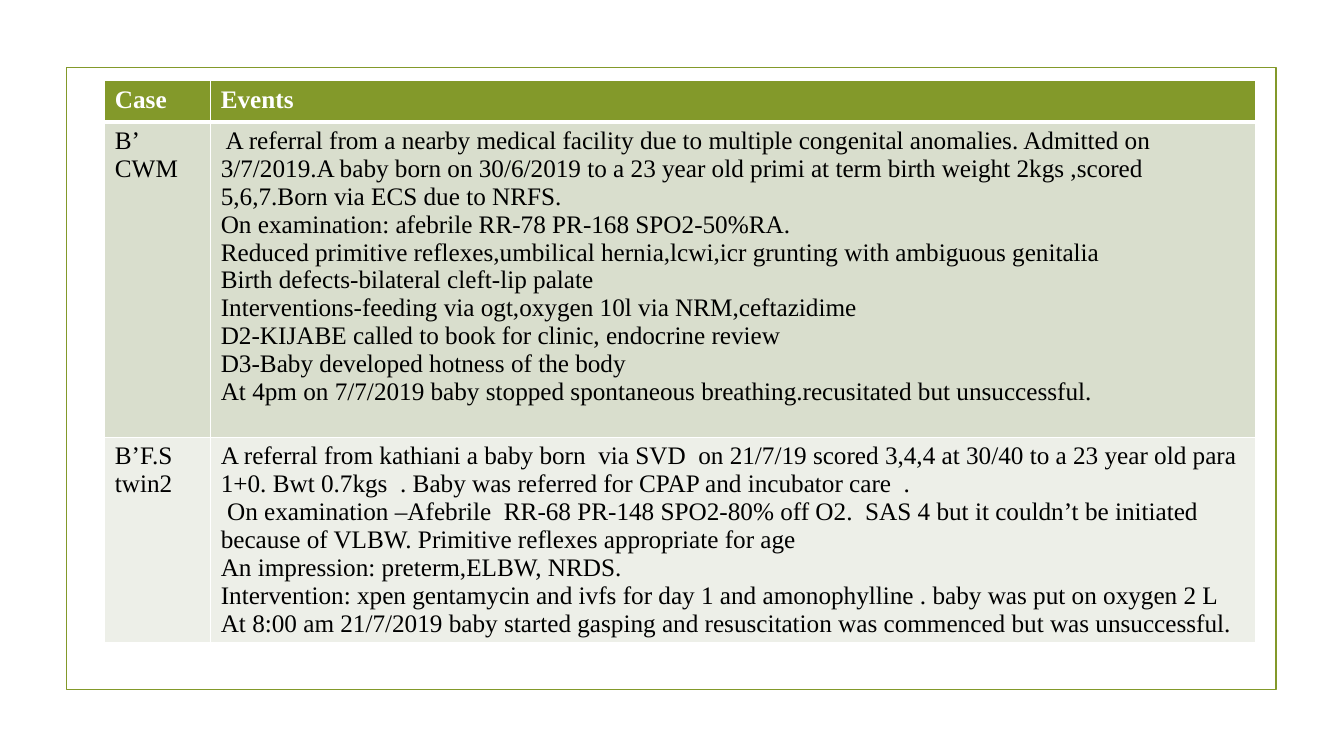
from lxml import etree
from pptx import Presentation
from pptx.dml.color import RGBColor as RGB
from pptx.enum.shapes import MSO_SHAPE as SHAPE
from pptx.oxml.ns import qn
from pptx.util import Inches, Pt

COLORS = {"olive": "83992A", "sage": "D9DECD", "pale": "EDEFE8",
          "white": "FFFFFF", "black": "000000"}
FONT = "Times New Roman"

HEADER = ("Case", "Events")
CASES = [
    ("B’ CWM", [
        " A referral from a nearby medical facility due to multiple congenital anomalies. "
        "Admitted on 3/7/2019.A baby born on 30/6/2019 to a 23 year old primi at term "
        "birth weight 2kgs ,scored 5,6,7.Born via ECS due to NRFS.",
        "On examination: afebrile RR-78 PR-168 SPO2-50%RA.",
        "Reduced primitive reflexes,umbilical hernia,lcwi,icr grunting with ambiguous genitalia",
        "Birth defects-bilateral cleft-lip palate",
        "Interventions-feeding via ogt,oxygen 10l via NRM,ceftazidime",
        "D2-KIJABE called to book for clinic, endocrine review",
        "D3-Baby developed hotness of the body",
        "At 4pm on 7/7/2019 baby stopped spontaneous breathing.recusitated but unsuccessful.",
    ]),
    ("B’F.S twin2", [
        "A referral from kathiani a baby born  via SVD  on 21/7/19 scored 3,4,4 at 30/40 "
        "to a 23 year old para 1+0. Bwt 0.7kgs  . Baby was referred for CPAP and "
        "incubator care  .",
        " On examination –Afebrile  RR-68 PR-148 SPO2-80% off O2.  SAS 4 but it couldn’t "
        "be initiated because of VLBW. Primitive reflexes appropriate for age",
        "An impression: preterm,ELBW, NRDS.",
        "Intervention: xpen gentamycin and ivfs for day 1 and amonophylline . "
        "baby was put on oxygen 2 L",
        "At 8:00 am 21/7/2019 baby started gasping and resuscitation was commenced "
        "but was unsuccessful.",
    ]),
]
COL_WIDTHS = (1.05, 10.36)
ROW_HEIGHTS = (0.41, 3.13, 2.04)
ROW_FILLS = ("olive", "sage", "pale")


def color(name):
    return RGB.from_string(COLORS[name])


def set_borders(cell, bottom):
    """White borders, 1 pt except at the bottom."""
    tc_pr = cell._tc.get_or_add_tcPr()
    for i, (side, width) in enumerate((("L", 1), ("R", 1), ("T", 1), ("B", bottom))):
        ln = etree.Element(qn(f"a:ln{side}"), w=str(Pt(width)))
        fill = etree.SubElement(ln, qn("a:solidFill"))
        etree.SubElement(fill, qn("a:srgbClr"), val=COLORS["white"])
        tc_pr.insert(i, ln)


def fill_cell(cell, lines, fill, header):
    cell.fill.solid()
    cell.fill.fore_color.rgb = color(fill)
    set_borders(cell, 3 if header else 1)
    tf = cell.text_frame
    tf.text = "\n".join(lines)
    for p in tf.paragraphs:
        p.font.name, p.font.size, p.font.bold = FONT, Pt(18), header
        p.font.color.rgb = color("white" if header else "black")


prs = Presentation()
prs.slide_width, prs.slide_height = Inches(13.33), Inches(7.5)
s = prs.slides.add_slide(prs.slide_layouts[6])

# Frame
frame = s.shapes.add_shape(SHAPE.RECTANGLE, Inches(0.66), Inches(0.67),
                           Inches(12), Inches(6.17))
frame.shadow.inherit = False
frame.fill.background()
frame.line.color.rgb = color("olive")
frame.line.width = Pt(1.25)

# Case table
rows = [([HEADER[0]], [HEADER[1]])] + [([case], events) for case, events in CASES]
table = s.shapes.add_table(len(rows), len(COL_WIDTHS), Inches(1.04), Inches(0.8),
                           Inches(sum(COL_WIDTHS)), Inches(sum(ROW_HEIGHTS))).table
for col, width in zip(table.columns, COL_WIDTHS):
    col.width = Inches(width)
for r, (row, height, fill) in enumerate(zip(rows, ROW_HEIGHTS, ROW_FILLS)):
    table.rows[r].height = Inches(height)
    for c, lines in enumerate(row):
        fill_cell(table.cell(r, c), lines, fill, header=r == 0)

prs.save("out.pptx")
